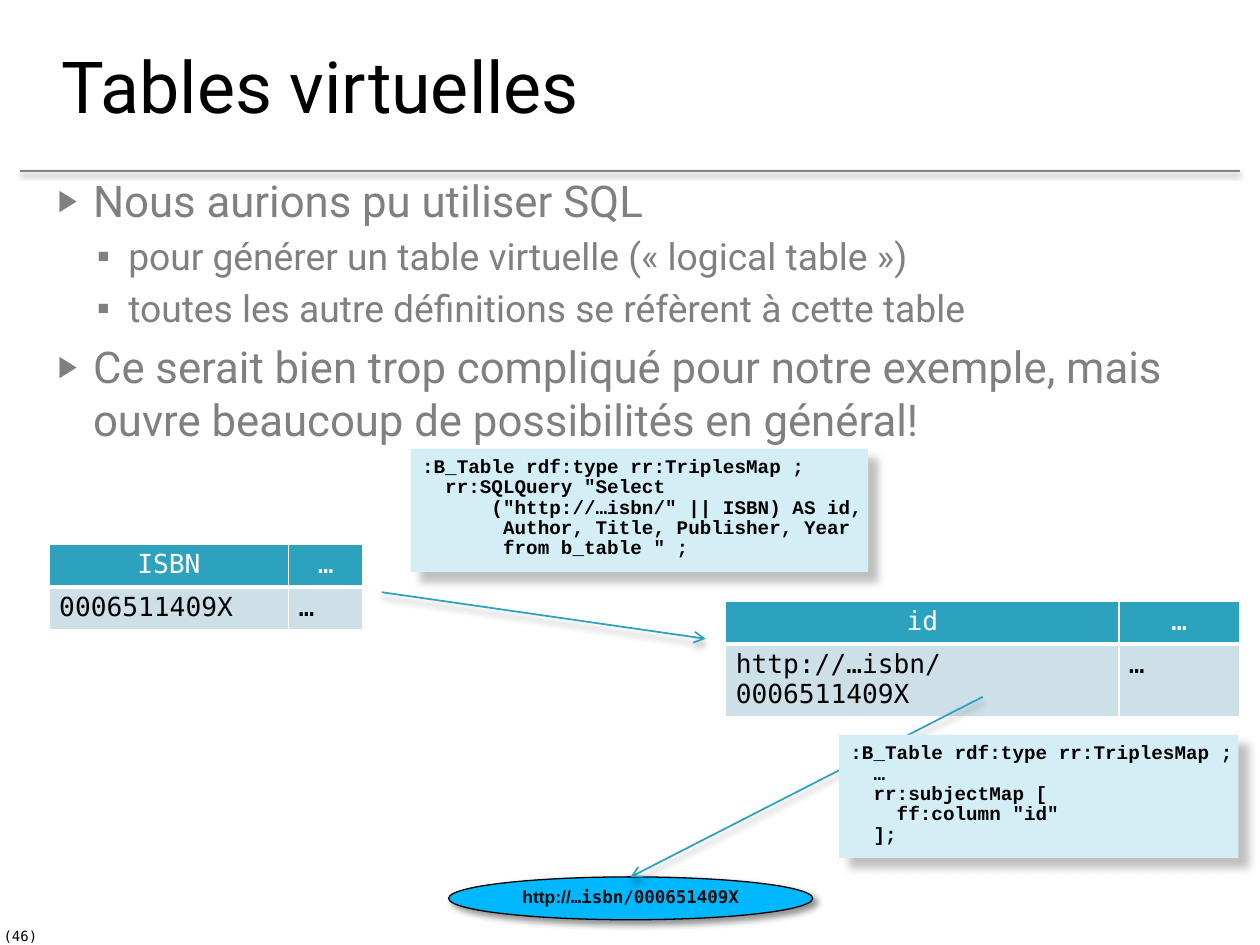
import pptx
import pptx.util
import pptx.dml.color
import pptx.enum.shapes
import pptx.enum.text
import pptx.oxml.ns
from lxml import etree

Inches, Pt = pptx.util.Inches, pptx.util.Pt
RGB = pptx.dml.color.RGBColor
SHAPE = pptx.enum.shapes.MSO_SHAPE
ANCHOR = pptx.enum.text.MSO_ANCHOR
ALIGN = pptx.enum.text.PP_ALIGN

BLACK = RGB(0, 0, 0)
WHITE = RGB(0xFF, 0xFF, 0xFF)
GREY = RGB(0x80, 0x80, 0x80)
TEAL = RGB(0x2D, 0xA2, 0xBF)
CELL_BLUE = RGB(0xCD, 0xE0, 0xE8)
CODE_BLUE = RGB(0xD3, 0xEE, 0xF5)
NODE_BLUE = RGB(0x00, 0xB8, 0xFF)
NODE_TEXT = RGB(0x0D, 0x0D, 0x0D)
SHADOW_GREY = RGB(0xC0, 0xC0, 0xC0)

ROBOTO, MONO, COURIER = "Roboto", "DejaVu Sans Mono", "Courier New"

# Bullet by level: character, size in percent, text size, left, hanging, space before
BULLETS = [("▶", 68, 25, 0.4, 0.28, 6), ("▪", 100, 21.3, 0.68, 0.25, 4)]


def sub(parent, tag, **attrs):
    e = etree.SubElement(parent, pptx.oxml.ns.qn("a:" + tag))
    for name, value in attrs.items():
        e.set(name, str(value))
    return e


def add_run(p, text, size, font, color, bold=False):
    r = p.add_run()
    r.text = text
    r.font.size = Pt(size)
    r.font.name = font
    r.font.color.rgb = color
    r.font.bold = bold


def set_margins(tf, left, top, right, bottom):
    tf.margin_left, tf.margin_top = Inches(left), Inches(top)
    tf.margin_right, tf.margin_bottom = Inches(right), Inches(bottom)


def add_shadow(s, color, alpha, blur, dist, angle):
    """Append an outer shadow; call after fill and line are set."""
    effects = sub(s._element.spPr, "effectLst")
    shadow = sub(effects, "outerShdw", blurRad=Pt(blur), dist=Pt(dist),
                 dir=angle * 60000, algn="tl", rotWithShape=0)
    sub(sub(shadow, "srgbClr", val=color), "alpha", val=alpha * 1000)


def add_text_box(slide, box, wrap=True, anchor=ANCHOR.TOP):
    tf = slide.shapes.add_textbox(*map(Inches, box)).text_frame
    tf.word_wrap = wrap
    tf.vertical_anchor = anchor
    set_margins(tf, 0.1, 0.05, 0.1, 0.05)
    return tf


def add_bullets(slide, box, items):
    tf = add_text_box(slide, box)
    for i, (level, text) in enumerate(items):
        char, percent, size, left, hanging, before = BULLETS[level]
        p = tf.paragraphs[0] if i == 0 else tf.add_paragraph()
        p.level = level
        p.space_before = Pt(before if i else 0)
        pPr = p._p.get_or_add_pPr()
        pPr.set("marL", str(Inches(left)))
        pPr.set("indent", str(-Inches(hanging)))
        sub(sub(pPr, "buClr"), "srgbClr", val=GREY)
        sub(pPr, "buSzPct", val=percent * 1000)
        sub(pPr, "buFont", typeface="Arial")
        sub(pPr, "buChar", char=char)
        add_run(p, text, size, ROBOTO, GREY)


def add_line(slide, start, end, color):
    s = slide.shapes.add_connector(pptx.enum.shapes.MSO_CONNECTOR.STRAIGHT,
                                   *map(Inches, start + end))
    s.line.color.rgb = color
    s.line.width = Pt(1)
    return s


def add_arrow(slide, start, end):
    s = add_line(slide, start, end, TEAL)
    sub(s.line._get_or_add_ln(), "tailEnd", type="arrow")
    add_shadow(s, BLACK, 35, 4, 3, 90)
    return s


def add_code(slide, box, lines):
    s = slide.shapes.add_shape(SHAPE.RECTANGLE, *map(Inches, box))
    s.fill.solid()
    s.fill.fore_color.rgb = CODE_BLUE
    s.line.fill.background()
    add_shadow(s, SHADOW_GREY, 100, 5, 8, 45)
    tf = s.text_frame
    tf.word_wrap = False
    tf.vertical_anchor = ANCHOR.TOP
    set_margins(tf, 0.09, 0.07, 0.09, 0.04)
    for i, line in enumerate(lines):
        p = tf.paragraphs[0] if i == 0 else tf.add_paragraph()
        p.alignment = ALIGN.LEFT
        p.line_spacing = 0.88
        add_run(p, line, 11, COURIER, BLACK, True)


def add_node(slide, box, parts):
    s = slide.shapes.add_shape(SHAPE.OVAL, *map(Inches, box))
    s.fill.solid()
    s.fill.fore_color.rgb = NODE_BLUE
    s.line.color.rgb = BLACK
    s.line.width = Pt(0.75)
    add_shadow(s, BLACK, 43, 4, 3, 45)
    tf = s.text_frame
    tf.word_wrap = True
    tf.vertical_anchor = ANCHOR.MIDDLE
    set_margins(tf, 0.09, 0.05, 0.09, 0.05)
    p = tf.paragraphs[0]
    p.alignment = ALIGN.CENTER
    p.line_spacing = 0.87
    for text, font in parts:
        add_run(p, text, 10, font, NODE_TEXT, True)
    return s


def style_cell(cell, text, header):
    tcPr = cell._tc.get_or_add_tcPr()
    for side in "LRTB":
        width = Pt(3 if header and side == "B" else 1)
        ln = sub(tcPr, "ln" + side, w=width)
        sub(sub(ln, "solidFill"), "srgbClr", val=WHITE)
    cell.fill.solid()
    cell.fill.fore_color.rgb = TEAL if header else CELL_BLUE
    set_margins(cell, 0.08, 0.04, 0.08, 0.04)
    p = cell.text_frame.paragraphs[0]
    p.alignment = ALIGN.CENTER if header else ALIGN.LEFT
    add_run(p, text, 15, MONO, WHITE if header else BLACK)


def add_data_table(slide, left, top, widths, rows):
    row_height = 0.34
    table = slide.shapes.add_table(
        len(rows), len(widths), Inches(left), Inches(top),
        Inches(sum(widths)), Inches(row_height * len(rows))).table
    table.horz_banding = False
    for column, width in zip(table.columns, widths):
        column.width = Inches(width)
    for i, row in enumerate(rows):
        table.rows[i].height = Inches(row_height)
        for j, text in enumerate(row):
            style_cell(table.cell(i, j), text, i == 0)


def main():
    prs = pptx.Presentation()
    prs.slide_width, prs.slide_height = Inches(10), Inches(7.5)
    slide = prs.slides.add_slide(prs.slide_layouts[6])

    number = add_text_box(slide, (-0.07, 7.31, 0.5, 0.23), wrap=False)
    add_run(number.paragraphs[0], "(46)", 8, MONO, BLACK)
    add_line(slide, (0.16, 1.36), (9.84, 1.36), GREY)
    add_bullets(slide, (0.24, 1.33, 9.45, 2.23), [
        (0, "Nous aurions pu utiliser SQL"),
        (1, "pour générer un table virtuelle (« logical table »)"),
        (1, "toutes les autre définitions se réfèrent à cette table"),
        (0, "Ce serait bien trop compliqué pour notre exemple, mais ouvre "
            "beaucoup de possibilités en général!"),
    ])
    title = add_text_box(slide, (0.39, 0.05, 9.3, 1.25), anchor=ANCHOR.MIDDLE)
    add_run(title.paragraphs[0], "Tables virtuelles", 41, ROBOTO, BLACK)

    node = add_node(slide, (3.56, 6.96, 2.89, 0.34),
                    [("http://", "Arial"), ("…isbn/000651409X", MONO)])
    add_data_table(slide, 0.39, 4.32, (1.9, 0.59),
                   [("ISBN", "…"), ("0006511409X", "…")])
    add_data_table(slide, 5.76, 4.77, (3.12, 0.96),
                   [("id", "…"), ("http://…isbn/0006511409X", "…")])
    add_code(slide, (3.26, 3.56, 3.63, 0.98), [
        ":B_Table rdf:type rr:TriplesMap ;",
        "  rr:SQLQuery \"Select",
        "      (\"http://…isbn/\" || ISBN) AS id,",
        "       Author, Title, Publisher, Year",
        "       from b_table \" ;",
    ])
    add_arrow(slide, (3.03, 4.7), (5.6, 5.07))
    add_arrow(slide, (7.8, 5.53), (5.01, 6.96)).end_connect(node, 0)
    add_code(slide, (6.66, 5.83, 3.17, 0.98), [
        ":B_Table rdf:type rr:TriplesMap ;",
        "  …",
        "  rr:subjectMap [",
        "    ff:column \"id\"",
        "  ];",
    ])
    prs.save("out.pptx")


if __name__ == "__main__":
    main()
